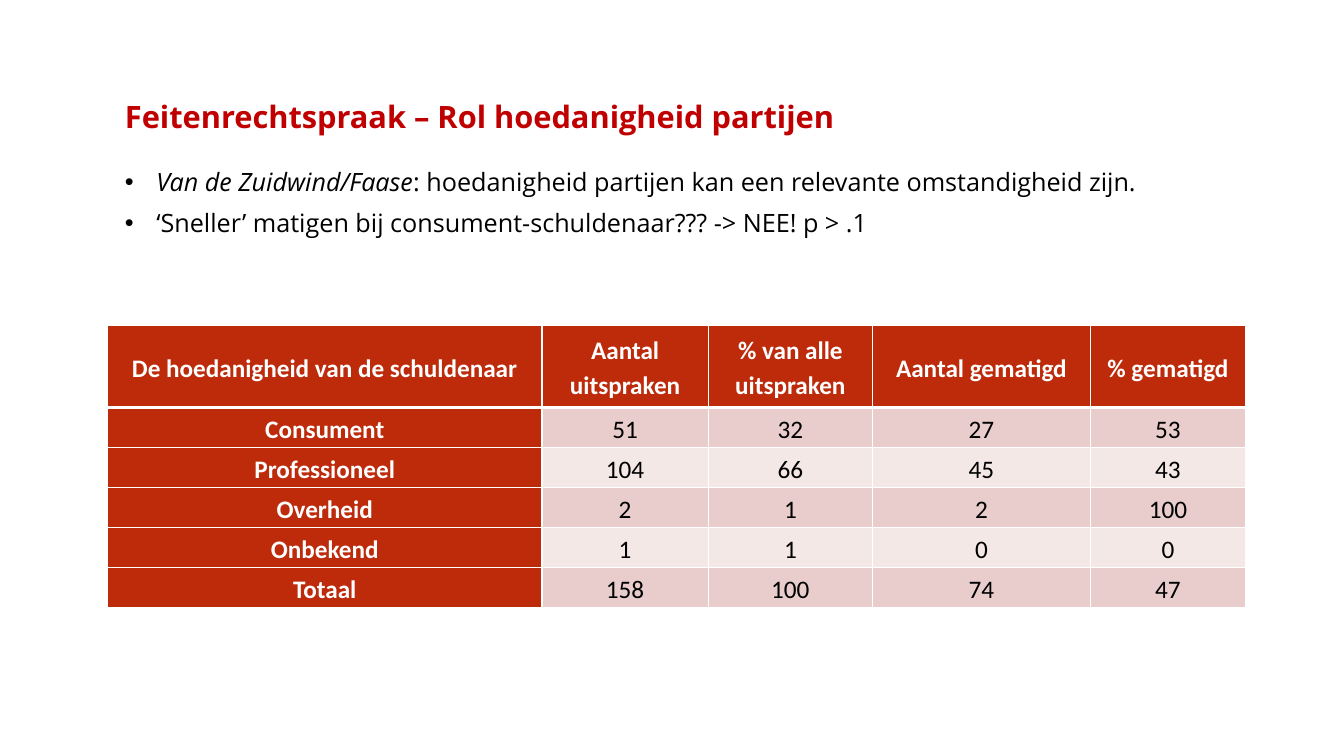
"""Build the slide on the role of the parties' capacity in case law."""
import pptx
import pptx.dml.color
import pptx.enum.text
import pptx.oxml
import pptx.oxml.ns
import pptx.util

Cm, Pt = pptx.util.Cm, pptx.util.Pt
ALIGN = pptx.enum.text.PP_ALIGN
ANCHOR = pptx.enum.text.MSO_ANCHOR
COLORS = {"title": "C00000", "text": "000000", "head": "BD2B0B",
          "white": "FFFFFF", "odd": "E8CDCC", "even": "F4E8E7"}
BULLETS = [
    [("Van de Zuidwind/Faase", True),
     (": hoedanigheid partijen kan een relevante omstandigheid zijn.", False)],
    [("‘Sneller’ matigen bij consument-schuldenaar??? -> NEE! p > .1", False)],
]
ROWS = [
    ["De hoedanigheid van de schuldenaar", "Aantal uitspraken",
     "% van alle uitspraken", "Aantal gematigd", "% gematigd"],
    ["Consument", "51", "32", "27", "53"],
    ["Professioneel", "104", "66", "45", "43"],
    ["Overheid", "2", "1", "2", "100"],
    ["Onbekend", "1", "1", "0", "0"],
    ["Totaal", "158", "100", "74", "47"],
]
COL_WIDTHS = [10.95, 4.19, 4.14, 5.49, 3.91]
HEAD_HEIGHT, ROW_HEIGHT = 2.08, 1.01


def rgb(name):
    """Return the named colour."""
    return pptx.dml.color.RGBColor.from_string(COLORS[name])


def add_run(p, text, size=18, font="Open Sans", color="text", bold=False, italic=False):
    """Add formatted text to a paragraph."""
    r = p.add_run()
    r.text = text
    r.font.size, r.font.name = Pt(size), font
    r.font.bold, r.font.italic = bold, italic
    r.font.color.rgb = rgb(color)


def add_frame(slide, left, top, width, height, anchor):
    """Add a wrapping text box and return its text frame."""
    sp = slide.shapes.add_textbox(Cm(left), Cm(top), Cm(width), Cm(height))
    tf = sp.text_frame
    tf.word_wrap, tf.vertical_anchor = True, anchor
    return tf


def add_title(slide, left, top, width, height):
    """Place the title at the bottom of its box."""
    p = add_frame(slide, left, top, width, height, ANCHOR.BOTTOM).paragraphs[0]
    p.line_spacing = Pt(28)
    add_run(p, "Feitenrechtspraak – Rol hoedanigheid partijen",
            size=22, color="title", bold=True)


def add_bullets(slide, left, top, width, height):
    """Place the bulleted remarks from the top of their box."""
    tf = add_frame(slide, left, top, width, height, ANCHOR.TOP)
    for i, runs in enumerate(BULLETS):
        p = tf.add_paragraph() if i else tf.paragraphs[0]
        pPr = p._p.get_or_add_pPr()
        pPr.set("marL", str(Cm(0.79)))
        pPr.set("indent", str(-Cm(0.79)))
        ns = pptx.oxml.ns.nsdecls("a")
        pPr.append(pptx.oxml.parse_xml(f'<a:buFont {ns} typeface="Arial"/>'))
        pPr.append(pptx.oxml.parse_xml(f'<a:buChar {ns} char="•"/>'))
        p.line_spacing = 0.9
        if i:
            p.space_before = Pt(10)
        for text, italic in runs:
            add_run(p, text, italic=italic)


def set_borders(cell, row):
    """Draw white cell borders, thicker below the header row."""
    widths = {"L": 1, "R": 1, "T": 3 if row == 1 else 1, "B": 3 if row == 0 else 1}
    for side, width in widths.items():
        cell._tc.get_or_add_tcPr().append(pptx.oxml.parse_xml(
            f'<a:ln{side} {pptx.oxml.ns.nsdecls("a")} w="{Pt(width)}"><a:solidFill>'
            f'<a:srgbClr val="{COLORS["white"]}"/></a:solidFill></a:ln{side}>'))


def add_results(slide, left, top):
    """Place the table of rulings per capacity of the debtor."""
    height = HEAD_HEIGHT + ROW_HEIGHT * (len(ROWS) - 1)
    table = slide.shapes.add_table(len(ROWS), len(COL_WIDTHS), Cm(left), Cm(top),
                                   Cm(sum(COL_WIDTHS)), Cm(height)).table
    table.first_col = True
    for column, width in zip(table.columns, COL_WIDTHS):
        column.width = Cm(width)
    for i, texts in enumerate(ROWS):
        table.rows[i].height = Cm(ROW_HEIGHT if i else HEAD_HEIGHT)
        for j, text in enumerate(texts):
            cell, is_head = table.cell(i, j), i == 0 or j == 0
            set_borders(cell, i)
            cell.fill.solid()
            cell.fill.fore_color.rgb = rgb("head" if is_head else "odd" if i % 2 else "even")
            cell.vertical_anchor = ANCHOR.MIDDLE
            cell.margin_left = cell.margin_right = Cm(0.19)
            cell.margin_top = cell.margin_bottom = 0
            p = cell.text_frame.paragraphs[0]
            p.alignment, p.line_spacing, p.space_after = ALIGN.CENTER, 1.15, Pt(10)
            add_run(p, text, font="Calibri", color="white" if is_head else "text",
                    bold=is_head)


def main():
    """Build and save the presentation."""
    prs = pptx.Presentation()
    prs.slide_width, prs.slide_height = Cm(33.87), Cm(19.05)
    slide = prs.slides.add_slide(prs.slide_layouts[6])
    add_title(slide, 2.9, 0.69, 30, 2.84)
    add_bullets(slide, 2.9, 4.14, 30, 10.9)
    add_results(slide, 2.71, 8.19)
    prs.save("out.pptx")


if __name__ == "__main__":
    main()
